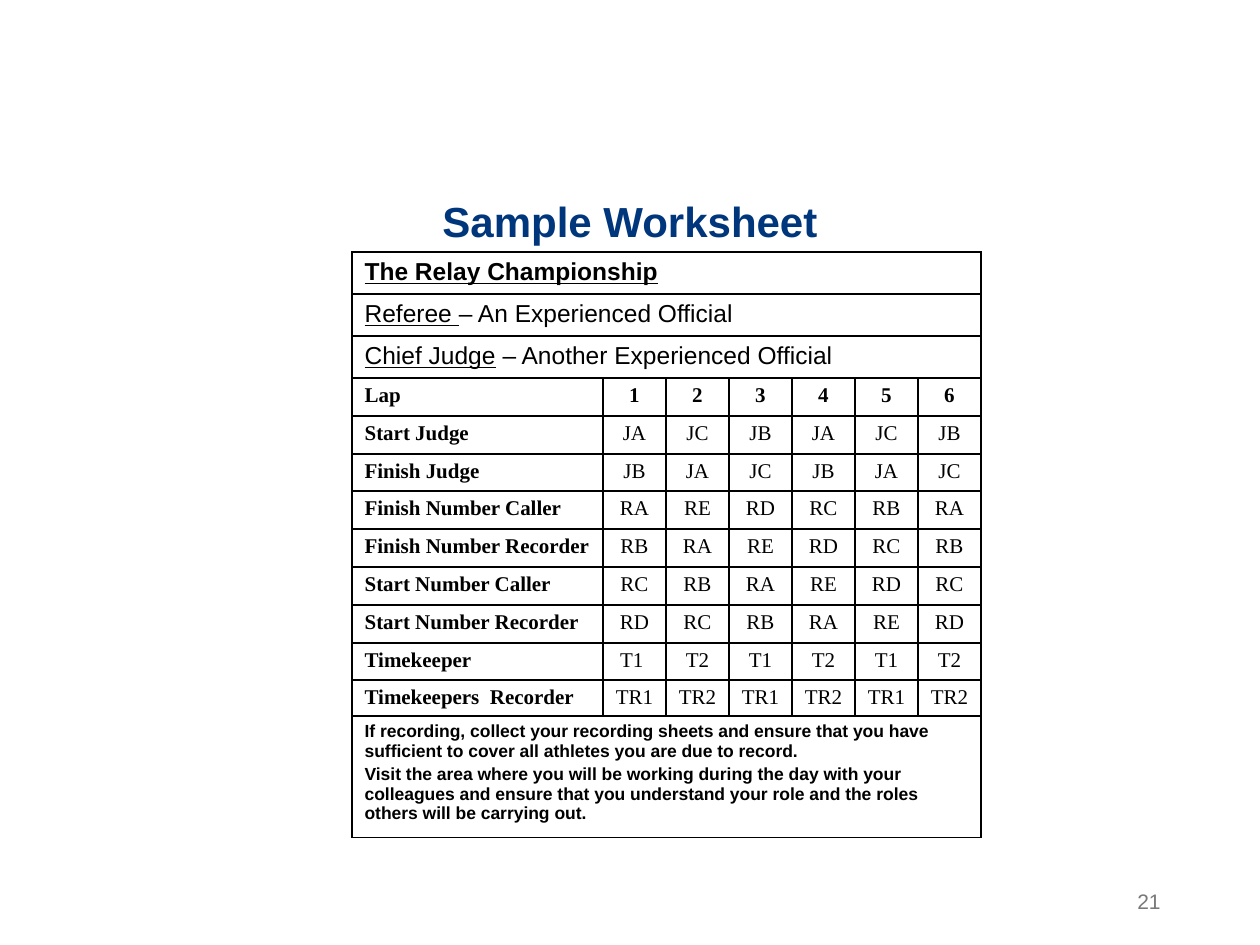
from lxml import etree
from pptx import Presentation, util as u
from pptx.dml.color import RGBColor
from pptx.enum import text
from pptx.oxml import ns

PX = 914400 / 126
BLACK = RGBColor(0x00, 0x00, 0x00)
NAVY = RGBColor(0x00, 0x36, 0x7C)
GREY = RGBColor(0x79, 0x79, 0x79)
SANS, SERIF = "Arial", "Times New Roman"
HANG = 48

COLUMNS = [251] + [63] * 6
ROWS = [42] * 3 + [38, 38, 37, 38, 38, 38, 38, 37] + [28, 122]

# Each heading row is a list of (words, bold, underlined)
HEADINGS = [
    [("The Relay Championship", True, True)],
    [("Referee ", False, True), ("– An Experienced Official", False, False)],
    [("Chief Judge", False, True), (" – Another Experienced Official", False, False)],
]
DUTIES = [
    ("Lap", ["1", "2", "3", "4", "5", "6"]),
    ("Start Judge", ["JA", "JC", "JB", "JA", "JC", "JB"]),
    ("Finish Judge", ["JB", "JA", "JC", "JB", "JA", "JC"]),
    ("Finish Number Caller", ["RA", "RE", "RD", "RC", "RB", "RA"]),
    ("Finish Number Recorder", ["RB", "RA", "RE", "RD", "RC", "RB"]),
    ("Start Number Caller", ["RC", "RB", "RA", "RE", "RD", "RC"]),
    ("Start Number Recorder", ["RD", "RC", "RB", "RA", "RE", "RD"]),
    ("Timekeeper", ["T1 ", "T2", "T1", "T2", "T1", "T2"]),
    ("Timekeepers  Recorder", ["TR1", "TR2", "TR1", "TR2", "TR1", "TR2"]),
]
ADVICE = [
    "If recording, collect your recording sheets and ensure that you have "
    "sufficient to cover all athletes you are due to record.",
    "Visit the area where you will be working during the day with your "
    "colleagues and ensure that you understand your role and the roles "
    "others will be carrying out.",
]


def px(length):
    return u.Emu(round(length * PX))


def add_run(paragraph, words, size, color=BLACK, font=SANS, bold=False, underline=False):
    run = paragraph.add_run()
    run.text = words
    run.font.name = font
    run.font.size = u.Pt(size)
    run.font.bold = bold
    run.font.underline = underline
    run.font.color.rgb = color


def add_line(slide, box, words, size, color, align, anchor, bold=False, wrap=True):
    frame = slide.shapes.add_textbox(*map(px, box)).text_frame
    frame.word_wrap = wrap
    frame.vertical_anchor = anchor
    if not wrap:
        frame.auto_size = text.MSO_AUTO_SIZE.SHAPE_TO_FIT_TEXT
    frame.paragraphs[0].alignment = align
    add_run(frame.paragraphs[0], words, size, color, bold=bold)


def set_borders(cell):
    properties = cell._tc.get_or_add_tcPr()
    for position, side in enumerate(("a:lnL", "a:lnR", "a:lnT", "a:lnB")):
        line = etree.Element(ns.qn(side), w=str(u.Pt(1)))
        fill = etree.SubElement(line, ns.qn("a:solidFill"))
        etree.SubElement(fill, ns.qn("a:srgbClr"), val=str(BLACK))
        properties.insert(position, line)


def hanging(cell, centred=False):
    paragraph = cell.text_frame.paragraphs[0]
    layout = paragraph._p.get_or_add_pPr()
    layout.set("marL", str(px(HANG)))
    layout.set("indent", str(px(-HANG)))
    if centred:
        paragraph.alignment = text.PP_ALIGN.CENTER
    return paragraph


def add_worksheet(slide, box):
    table = slide.shapes.add_table(len(ROWS), len(COLUMNS), *map(px, box)).table
    table.first_row = table.horz_banding = False
    for column, width in zip(table.columns, COLUMNS):
        column.width = px(width)
    for row, height in zip(table.rows, ROWS):
        row.height = px(height)
    for cell in table.iter_cells():
        cell.fill.background()
        set_borders(cell)

    # Rows that run across the full width
    last_row, last_column = len(ROWS) - 1, len(COLUMNS) - 1
    for row in [*range(len(HEADINGS)), last_row]:
        table.cell(row, 0).merge(table.cell(row, last_column))

    # Event and officials
    for row, parts in enumerate(HEADINGS):
        paragraph = hanging(table.cell(row, 0))
        for words, bold, underline in parts:
            add_run(paragraph, words, 14, bold=bold, underline=underline)

    # Duties by lap
    for row, (duty, officials) in enumerate(DUTIES, len(HEADINGS)):
        add_run(hanging(table.cell(row, 0)), duty, 12, font=SERIF, bold=True)
        for column, official in enumerate(officials, 1):
            add_run(hanging(table.cell(row, column), centred=True), official, 12,
                    font=SERIF, bold=duty == "Lap")

    # Advice
    frame = table.cell(last_row, 0).text_frame
    for index, advice in enumerate(ADVICE):
        paragraph = frame.add_paragraph() if index else frame.paragraphs[0]
        if index:
            paragraph.space_before = u.Pt(2)
        add_run(paragraph, advice, 10, bold=True)


def main():
    deck = Presentation()
    deck.slide_width, deck.slide_height = px(1260), px(945)
    slide = deck.slides.add_slide(deck.slide_layouts[6])
    add_worksheet(slide, (352, 252, sum(COLUMNS), sum(ROWS)))
    # Title and page number
    add_line(slide, (428, 189, 404, 63), "Sample Worksheet", 24, NAVY,
             text.PP_ALIGN.CENTER, text.MSO_ANCHOR.TOP, bold=True, wrap=False)
    add_line(slide, (890, 876, 283, 50), "21", 12, GREY,
             text.PP_ALIGN.RIGHT, text.MSO_ANCHOR.MIDDLE)
    deck.save("out.pptx")


if __name__ == "__main__":
    main()
